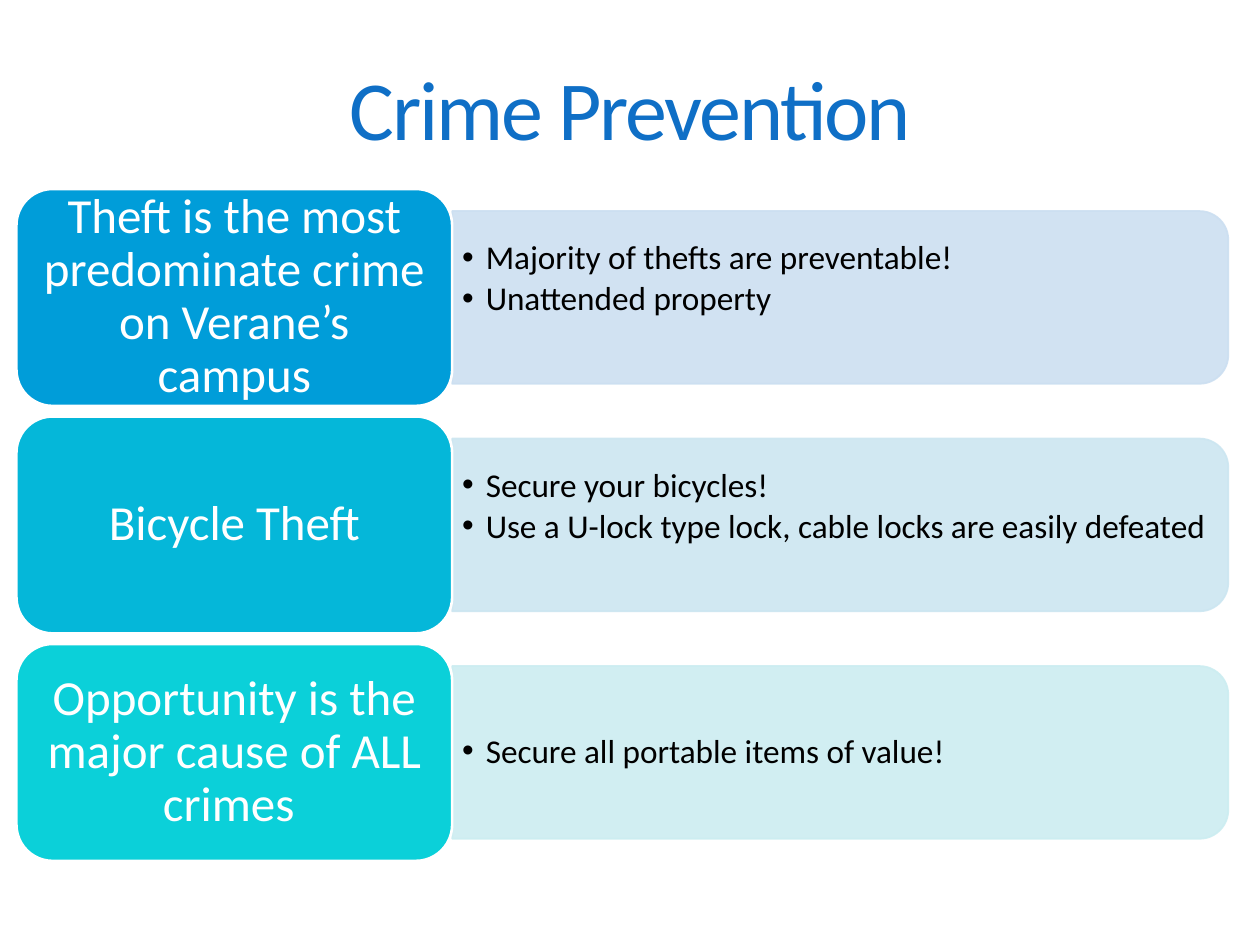
import pptx
import pptx.dml.color
import pptx.enum.shapes
import pptx.enum.text
import pptx.oxml.ns
import pptx.util
import lxml.etree

Pt = pptx.util.Pt
Shape = pptx.enum.shapes.MSO_SHAPE
Align = pptx.enum.text.PP_ALIGN
Anchor = pptx.enum.text.MSO_ANCHOR

ROW_PITCH = 130
FIRST_CENTRE = 170
LABEL_LEFT, LABEL_WIDTH, LABEL_HEIGHT = 9.4, 249, 124
PANEL_LEFT, PANEL_WIDTH, PANEL_HEIGHT = 258.4, 443.5, 98.7
DETAIL_WIDTH, DETAIL_HEIGHT = 438.5, 89

# label, label fill, panel fill, details, room kept free below the details
TOPICS = [
    ("Theft is the most predominate crime on Verane’s campus", "009DD9", "CCDFF1",
     ["Majority of thefts are preventable!", "Unattended property"], 20.5),
    ("Bicycle Theft", "05B7D9", "CCE6F1",
     ["Secure your bicycles!",
      "Use a U-lock type lock, cable locks are easily defeated"], 20.5),
    ("Opportunity is the major cause of ALL crimes ", "0BD0D9", "CCEDF1",
     ["Secure all portable items of value!"], 0),
]


def rgb(code):
    return pptx.dml.color.RGBColor.from_string(code)


def sub_element(parent, tag, **attributes):
    return lxml.etree.SubElement(parent, pptx.oxml.ns.qn(tag), **attributes)


class TopicSlide:
    font = "Calibri"

    def __init__(self, slide):
        self.slide = slide

    def add_run(self, paragraph, text, size, color):
        paragraph.line_spacing = 0.9
        run = paragraph.add_run()
        run.text = text
        run.font.name = self.font
        run.font.size = Pt(size)
        run.font.color.rgb = rgb(color)
        return run

    def prepare_frame(self, frame, side, edge, extra_bottom=0):
        """Wrap and centre the text vertically, with the given insets."""
        frame.word_wrap = True
        frame.vertical_anchor = Anchor.MIDDLE
        frame.margin_left = frame.margin_right = Pt(side)
        frame.margin_top = Pt(edge)
        frame.margin_bottom = Pt(edge + extra_bottom)

    def add_block(self, kind, left, top, width, height, fill, line, line_width):
        block = self.slide.shapes.add_shape(
            kind, Pt(left), Pt(top), Pt(width), Pt(height))
        block.shadow.inherit = False
        block.fill.solid()
        block.fill.fore_color.rgb = rgb(fill)
        block.line.color.rgb = rgb(line)
        block.line.width = Pt(line_width)
        return block

    def add_title(self, text):
        title = self.slide.shapes.title
        title.left, title.top, title.width, title.height = 0, 0, Pt(720), Pt(130)
        title.text_frame.vertical_anchor = Anchor.MIDDLE
        paragraph = title.text_frame.paragraphs[0]
        paragraph.alignment = Align.CENTER
        run = self.add_run(paragraph, text, 48, "0F6FC6")
        run.font._element.set("spc", "-120")

    def add_panel(self, centre, fill):
        """Add a tall shape turned a quarter, so its round corners face right."""
        panel = self.add_block(
            Shape.ROUND_2_SAME_RECTANGLE,
            PANEL_LEFT + (PANEL_WIDTH - PANEL_HEIGHT) / 2, centre - PANEL_WIDTH / 2,
            PANEL_HEIGHT, PANEL_WIDTH, fill, fill, 1)
        panel.rotation = 90
        for color in panel._element.spPr.iter(pptx.oxml.ns.qn("a:srgbClr")):
            sub_element(color, "a:alpha", val="90000")

    def add_details(self, centre, details, free_below):
        box = self.slide.shapes.add_textbox(
            Pt(PANEL_LEFT), Pt(centre - DETAIL_HEIGHT / 2),
            Pt(DETAIL_WIDTH), Pt(DETAIL_HEIGHT))
        frame = box.text_frame
        self.prepare_frame(frame, 5.7, 2.9, free_below)
        for index, detail in enumerate(details):
            paragraph = frame.add_paragraph() if index else frame.paragraphs[0]
            paragraph.level = 1
            paragraph.space_after = Pt(2.85)
            self.add_run(paragraph, detail, 19, "000000")
            properties = paragraph._p.get_or_add_pPr()
            properties.set("marL", str(Pt(13.5)))
            properties.set("indent", str(-Pt(13.5)))
            sub_element(properties, "a:buFont", typeface="Arial")
            sub_element(properties, "a:buChar", char="•")

    def add_label(self, centre, text, fill):
        label = self.add_block(
            Shape.ROUNDED_RECTANGLE, LABEL_LEFT, centre - LABEL_HEIGHT / 2,
            LABEL_WIDTH, LABEL_HEIGHT, fill, "FFFFFF", 1.5)
        self.prepare_frame(label.text_frame, 8.4, 4.2)
        paragraph = label.text_frame.paragraphs[0]
        paragraph.alignment = Align.CENTER
        self.add_run(paragraph, text, 28, "FFFFFF")


def main():
    deck = pptx.Presentation()
    deck.slide_width, deck.slide_height = Pt(720), Pt(540)
    page = TopicSlide(deck.slides.add_slide(deck.slide_layouts.get_by_name("Title Only")))
    page.add_title("Crime Prevention")
    for row, (label, label_fill, panel_fill, details, free_below) in enumerate(TOPICS):
        centre = FIRST_CENTRE + row * ROW_PITCH
        page.add_panel(centre, panel_fill)
        page.add_details(centre, details, free_below)
        page.add_label(centre, label, label_fill)
    deck.save("out.pptx")


if __name__ == "__main__":
    main()
